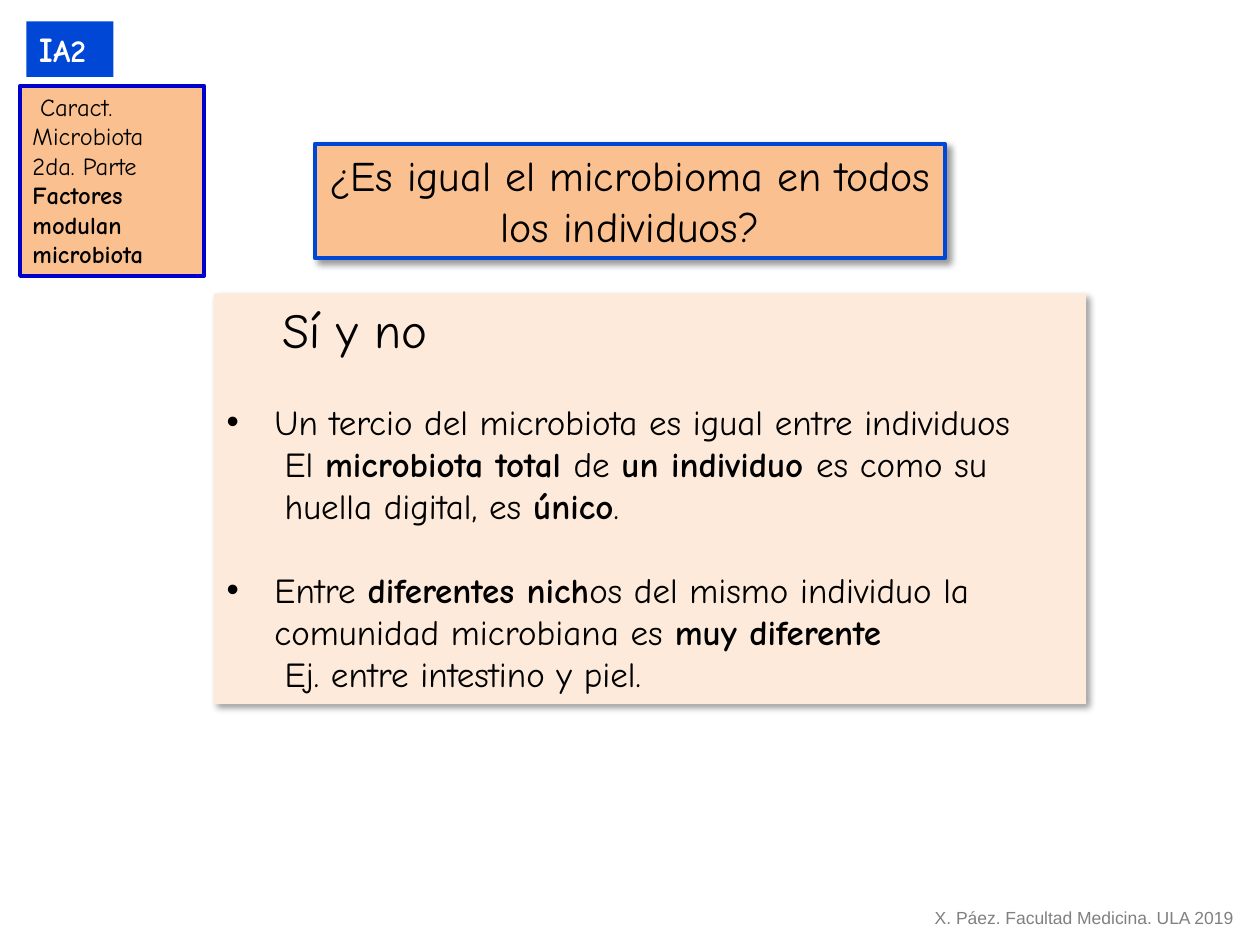
"""Build the slide on whether the microbiome is the same in every individual."""
from lxml import etree
from pptx import Presentation
from pptx import util as u
from pptx.dml.color import RGBColor
from pptx.enum import shapes, text
from pptx.oxml import ns

BLACK = RGBColor(0x00, 0x00, 0x00)
WHITE = RGBColor(0xFF, 0xFF, 0xFF)
GRAY = RGBColor(0x80, 0x80, 0x80)
BLUE = RGBColor(0x00, 0x47, 0xD6)
NAVY = RGBColor(0x00, 0x00, 0xCC)
ORANGE = RGBColor(0xFA, 0xC0, 0x90)
CREAM = RGBColor(0xFD, 0xEA, 0xDA)
HANG = 0.38
DEEP = 0.46


def add_xml(parent, tag, **attributes):
    """Append a DrawingML element and return it."""
    return etree.SubElement(parent, ns.qn(tag), attributes)


def add_panel(slide, left, top, width, height, fill, line=None, shadow=False):
    """Add a filled rectangle, with an outline and a soft shadow on request."""
    panel = slide.shapes.add_shape(
        shapes.MSO_SHAPE.RECTANGLE, *map(u.Inches, (left, top, width, height)))
    panel.fill.solid()
    panel.fill.fore_color.rgb = fill
    if line is None:
        panel.line.fill.background()
    else:
        panel.line.color.rgb = line
        panel.line.width = u.Pt(2.25)
    panel.shadow.inherit = False
    if shadow:
        effects = panel.element.spPr.find(ns.qn("a:effectLst"))
        outer = add_xml(effects, "a:outerShdw", blurRad=str(u.Pt(4)), dist=str(u.Pt(3)),
                        dir="2700000", algn="tl", rotWithShape="0")
        add_xml(add_xml(outer, "a:srgbClr", val="000000"), "a:alpha", val="40000")
    return panel.text_frame


def set_up_frame(frame, wrap=True):
    """Anchor the text at the top and set its wrapping."""
    frame.word_wrap = wrap
    frame.vertical_anchor = text.MSO_ANCHOR.TOP


def write(frame, content, size=20, color=BLACK, font="Comic Neue", indent=0,
          bullet=False, before=0, align=text.PP_ALIGN.LEFT, bold=False, first_size=None):
    """Write one paragraph, in which each ** switches bold on or off."""
    paragraph = frame.paragraphs[0]
    if paragraph.runs:
        paragraph = frame.add_paragraph()
    paragraph.alignment = align
    if before:
        paragraph.space_before = u.Pt(before)
    properties = paragraph._p.get_or_add_pPr()
    properties.set("marL", str(u.Inches(indent)))
    properties.set("indent", str(u.Inches(-indent if bullet else 0)))
    if bullet:
        add_xml(properties, "a:buFont", typeface="Arial")
        add_xml(properties, "a:buChar", char="•")
    pieces = [(part, bold or index % 2 == 1, size)
              for index, part in enumerate(content.split("**")) if part]
    if first_size:
        pieces = [(content[0], bold, first_size), (content[1:], bold, size)]
    for part, is_bold, points in pieces:
        run = paragraph.add_run()
        run.text = part
        run.font.name = font
        run.font.size = u.Pt(points)
        run.font.bold = is_bold
        run.font.color.rgb = color


def add_question(slide):
    """Add the question that heads the slide."""
    question = add_panel(slide, 2.5, 1.14, 5, 0.91, ORANGE, line=BLUE, shadow=True)
    set_up_frame(question)
    write(question, "¿Es igual el microbioma en todos los individuos?",
          size=24, align=text.PP_ALIGN.CENTER)


def add_credit(slide):
    """Add the author line at the bottom right."""
    credit = slide.shapes.add_textbox(
        *map(u.Inches, (7.32, 7.15, 2.59, 0.27))).text_frame
    set_up_frame(credit, wrap=False)
    write(credit, "X. Páez. Facultad Medicina. ULA 2019", size=10, color=GRAY, font="Arial")


def add_answer(slide):
    """Add the answer with its two bulleted reasons."""
    answer = add_panel(slide, 1.7, 2.33, 6.92, 3.26, CREAM, shadow=True)
    set_up_frame(answer)
    write(answer, "Sí y no", size=28, indent=0.44)
    reasons = [
        ("Un tercio del microbiota es igual entre individuos",
         "El **microbiota total **de **un individuo **es como su",
         "huella digital, es **único**."),
        ("Entre **diferentes nich**os del mismo individuo la comunidad microbiana es "
         "**muy diferente**",
         "Ej. entre intestino y piel."),
    ]
    for reason, *details in reasons:
        write(answer, reason, indent=HANG, bullet=True, before=24)
        for detail in details:
            write(answer, detail, indent=DEEP)


def add_section_marker(slide):
    """Add the unit code and the outline of the section."""
    code = add_panel(slide, 0.21, 0.17, 0.69, 0.44, BLUE)
    set_up_frame(code, wrap=False)
    write(code, "IA2", size=18, color=WHITE, bold=True, first_size=20)
    outline = add_panel(slide, 0.16, 0.68, 1.46, 1.51, ORANGE, line=NAVY)
    set_up_frame(outline)
    write(outline, "Caract.", size=14, indent=0.06)
    for topic in ("Microbiota", "2da. Parte", "**Factores modulan microbiota**"):
        write(outline, topic, size=14)


def main():
    """Build and save the presentation."""
    presentation = Presentation()
    presentation.slide_width = u.Inches(10)
    presentation.slide_height = u.Inches(7.5)
    slide = presentation.slides.add_slide(presentation.slide_layouts[6])
    add_question(slide)
    add_credit(slide)
    add_answer(slide)
    add_section_marker(slide)
    presentation.save("out.pptx")


if __name__ == "__main__":
    main()
